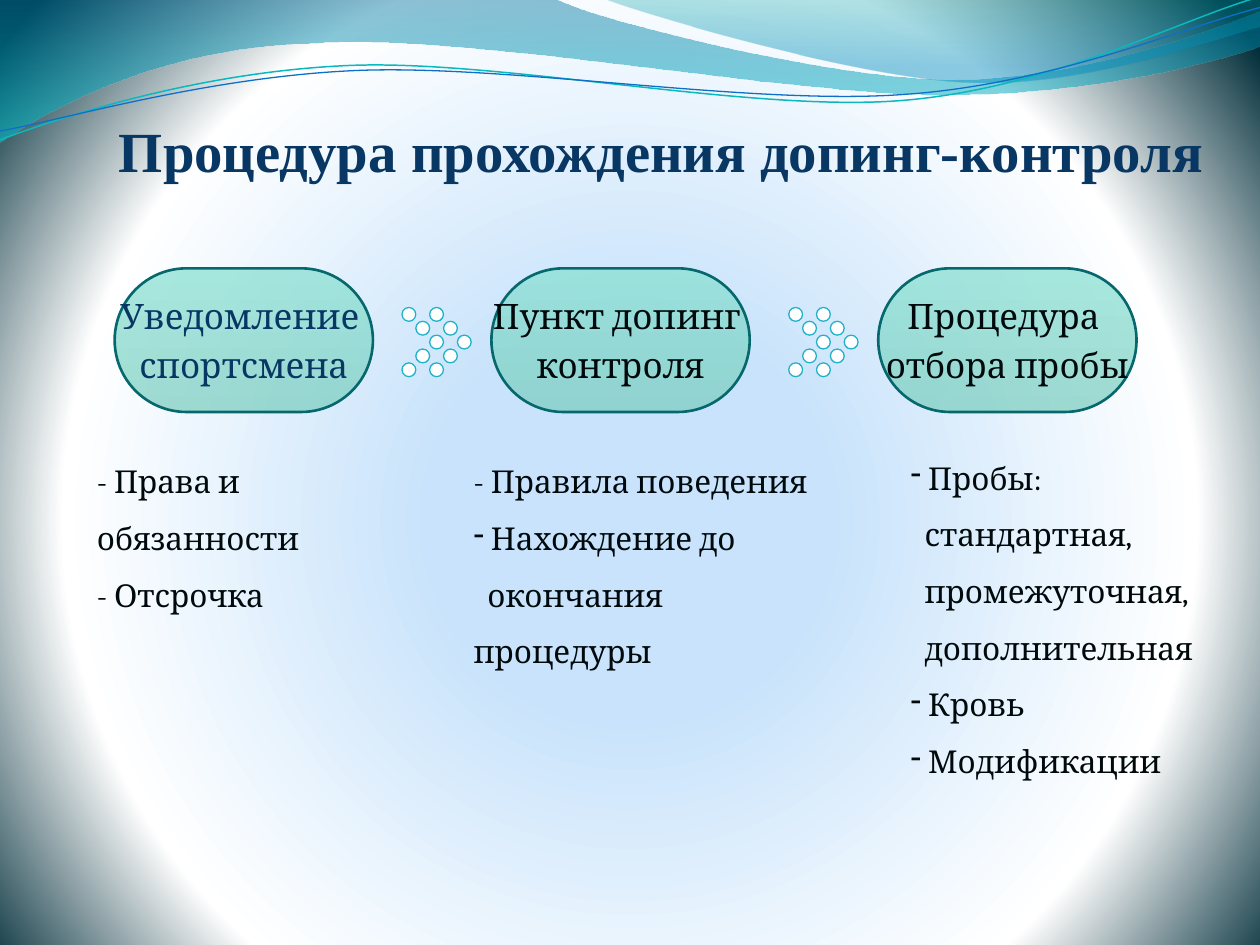
import math

from pptx import Presentation, util as u
from pptx.dml.color import RGBColor
from pptx.enum import shapes, text
from pptx.oxml import parse_xml
from pptx.oxml.ns import nsdecls, qn

COLORS = {
    "navy": "083763", "ink": "000A0C", "white": "FFFFFF", "sky": "C8E3FB", "abyss": "002C38",
    "mint": "85DFD0", "sage": "7ACDBF", "pine": "06686C", "dot": "21B2C9",
    "ocean": "0074A1", "aqua": "00C6CF", "teal": "00A1A9", "azure": "008BBF",
    "cyan": "0AB8BF", "blue": "0F6FC6",
}
DOWN = '<a:lin ang="5400000" scaled="0"/>'
RADIAL = '<a:path path="circle"><a:fillToRect l="10000" t="110000" r="10000" b="100000"/></a:path>'
TILT = 2.7

WAVES = [
    ([[(0, 0)], [(4.4, -0.01)], [(4.76, 0.17), (6.64, 0.63), (7.58, 0.63)],
      [(8.53, 0.63), (9.58, 0.26), (10, 0.09)], [(10.01, 0.36)],
      [(9.83, 0.44), (8.7, 0.76), (7.46, 0.75)], [(6.22, 0.75), (3.82, 0.28), (2.57, 0.34)],
      [(1.29, 0.36), (0.46, 0.83), (-0.01, 1.13)], [(0, 0)]],
     [(0, "ocean", 45), (100, "aqua", 55)]),
    ([[(4.79, -0.01)], [(5.09, 0.11), (6.82, 0.62), (7.69, 0.65)],
      [(8.56, 0.69), (9.61, 0.32), (10, 0.21)], [(10, 0)], [(4.79, -0.01)]],
     [(0, "teal", 30), (80, "azure", 45)]),
]
STRANDS = [
    ([[(0, 1.11)], [(0.48, 0.93), (1.58, 0.57), (2.77, 0.52)],
      [(3.95, 0.47), (5.93, 0.89), (7.13, 0.8)], [(8.33, 0.71), (9.38, 0.15), (9.98, -0.02)]],
     (4.99, 0.57), "cyan", 0.85),
    ([[(0, 1.04)], [(0.47, 0.96), (1.64, 0.61), (2.83, 0.56)],
      [(4.03, 0.51), (5.97, 0.84), (7.17, 0.75)], [(8.36, 0.67), (9.41, 0.21), (10, 0.06)]],
     (5, 0.58), "blue", 0.75),
]
STEPS = [
    (0.91, ["Уведомление ", "спортсмена"], "navy"),
    (3.9, ["Пункт допинг ", "контроля"], "ink"),
    (6.97, ["Процедура ", "отбора пробы"], "ink"),
]
NOTES = [
    (0.67, 3.47, 2.83, 1.01, [("- Права и обязанности", False), ("- Отсрочка", False)]),
    (3.66, 3.47, 2.91, 1.46, [("- Правила поведения", False), (" Нахождение до", True),
                              ("  окончания процедуры", False)]),
    (7.13, 3.44, 2.83, 2.83, [(" Пробы:", True), ("  стандартная,", False),
                              ("  промежуточная,", False), ("  дополнительная", False),
                              (" Кровь", True), (" Модификации", True)]),
]


def rgb(name):
    return RGBColor.from_string(COLORS[name])


def gradient(stops, direction):
    gs = "".join(
        f'<a:gs pos="{pos * 1000}"><a:srgbClr val="{COLORS[c]}">'
        f'<a:alpha val="{alpha * 1000}"/></a:srgbClr></a:gs>' for pos, c, alpha in stops)
    return parse_xml(f'<a:gradFill {nsdecls("a")} rotWithShape="1"><a:gsLst>{gs}</a:gsLst>'
                     f'{direction}</a:gradFill>')


def turn(path, center, degrees):
    cos, sin = math.cos(math.radians(degrees)), math.sin(math.radians(degrees))
    cx, cy = center
    return [[(cx + (x - cx) * cos - (y - cy) * sin, cy + (x - cx) * sin + (y - cy) * cos)
             for x, y in seg] for seg in path]


class Deck:
    """Draws styled elements on the current slide."""

    body_font, title_font = "Cambria", "Times New Roman"

    def __init__(self, prs):
        self.s = prs.slides.add_slide(prs.slide_layouts[5])

    def fade(self, fill, props, stops, direction=DOWN):
        fill.background()
        props.replace(props.find(qn("a:noFill")), gradient(stops, direction))

    def background(self, stops):
        self.fade(self.s.background.fill, self.s._element.cSld.bg.bgPr, stops, RADIAL)

    def outline(self, sp, color, width):
        sp.shadow.inherit = False
        sp.line.color.rgb = rgb(color)
        sp.line.width = u.Pt(width)

    def curve(self, parent, path, closed):
        ends = [tuple(map(u.Inches, seg[-1])) for seg in path]
        fb = parent.build_freeform(*ends[0], scale=1.0)
        fb.add_line_segments(ends[1:], close=closed)
        sp = fb.convert_to_shape()
        lines = list(sp._element.iter(qn("a:lnTo")))
        for line, seg in zip(lines, path[1:]):
            if len(seg) == 3:
                pts = "".join(f'<a:pt x="{u.Inches(x) - sp.left}" y="{u.Inches(y) - sp.top}"/>'
                              for x, y in seg)
                line.getparent().replace(line, parse_xml(
                    f'<a:cubicBezTo {nsdecls("a")}>{pts}</a:cubicBezTo>'))
        return sp

    def wave(self, path, stops):
        sp = self.curve(self.s.shapes, path, True)
        sp.shadow.inherit = False
        sp.line.fill.background()
        self.fade(sp.fill, sp._element.spPr, stops)

    def strands(self, strands):
        group = self.s.shapes.add_group_shape()
        for path, center, color, width in strands:
            sp = self.curve(group.shapes, turn(path, center, TILT), False)
            sp.rotation = 360 - TILT
            sp.fill.background()
            self.outline(sp, color, width)

    def run(self, p, words, size, color, font=body_font, bold=False):
        r = p.add_run()
        r.text = words
        r.font.size, r.font.name, r.font.bold = u.Pt(size), font, bold
        r.font.color.rgb = rgb(color)

    def paragraph(self, tf, index):
        return tf.add_paragraph() if index else tf.paragraphs[0]

    def chevrons(self, left, top, size=0.11):
        group = self.s.shapes.add_group_shape()
        for column in (2, 0):
            for row in range(5):
                x = left + size * (column + 2 - abs(row - 2))
                sp = group.shapes.add_shape(shapes.MSO_SHAPE.OVAL, u.Inches(x),
                                            u.Inches(top + size * row),
                                            u.Inches(size), u.Inches(size))
                sp.fill.solid()
                sp.fill.fore_color.rgb = rgb("white")
                self.outline(sp, "dot", 0.75)

    def capsule(self, left, lines, color):
        sp = self.s.shapes.add_shape(shapes.MSO_SHAPE.ROUNDED_RECTANGLE, u.Inches(left),
                                     u.Inches(2.13), u.Inches(2.05), u.Inches(1.14))
        sp.adjustments[0] = 0.5
        self.fade(sp.fill, sp._element.spPr, [(0, "mint", 70), (100, "sage", 70)])
        self.outline(sp, "pine", 1.5)
        tf = sp.text_frame
        tf.word_wrap = False
        tf.vertical_anchor = text.MSO_ANCHOR.MIDDLE
        for i, line in enumerate(lines):
            p = self.paragraph(tf, i)
            p.alignment = text.PP_ALIGN.CENTER
            p.space_before = u.Pt(4)
            self.run(p, line, 20, color)

    def notes(self, left, top, width, height, lines):
        tf = self.s.shapes.add_textbox(*map(u.Inches, (left, top, width, height))).text_frame
        tf.word_wrap = True
        tf.auto_size = text.MSO_AUTO_SIZE.SHAPE_TO_FIT_TEXT
        for i, (line, bulleted) in enumerate(lines):
            p = self.paragraph(tf, i)
            p.line_spacing = 1.5
            if bulleted:
                pPr = p._p.get_or_add_pPr()
                pPr.append(parse_xml(f'<a:buFontTx {nsdecls("a")}/>'))
                pPr.append(parse_xml(f'<a:buChar {nsdecls("a")} char="-"/>'))
            self.run(p, line, 18, "ink")

    def title(self, words):
        sp = self.s.shapes.title
        self.s.shapes._spTree.append(sp._element)
        sp.left, sp.top, sp.width, sp.height = map(u.Inches, (0.57, 0.83, 9, 0.63))
        tf = sp.text_frame
        tf.auto_size = text.MSO_AUTO_SIZE.NONE
        tf.vertical_anchor = text.MSO_ANCHOR.BOTTOM
        tf.margin_left = tf.margin_top = tf.margin_bottom = 0
        tf.margin_right = u.Inches(0.02)
        p = tf.paragraphs[0]
        p.alignment = text.PP_ALIGN.RIGHT
        self.run(p, words, 32.4, "navy", self.title_font, True)


def main():
    prs = Presentation()
    prs.slide_width, prs.slide_height = u.Inches(10), u.Inches(7.5)
    deck = Deck(prs)
    deck.background([(25, "sky", 100), (72, "white", 100), (100, "abyss", 100)])
    for wave in WAVES:
        deck.wave(*wave)
    deck.strands(STRANDS)
    deck.chevrons(3.19, 2.44)
    for step in STEPS:
        deck.capsule(*step)
    deck.chevrons(6.26, 2.44)
    for note in NOTES:
        deck.notes(*note)
    deck.title("Процедура прохождения допинг-контроля")
    prs.save("out.pptx")


if __name__ == "__main__":
    main()
